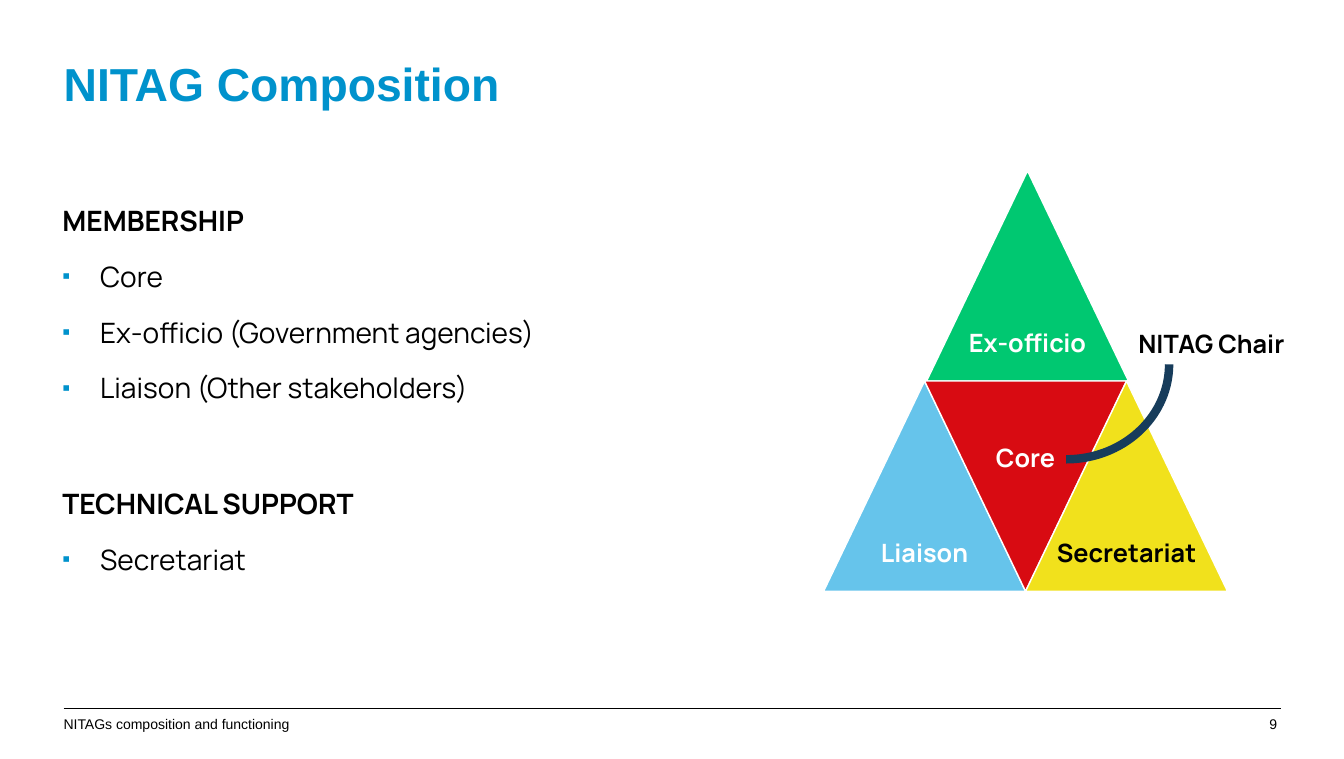
"""Build the NITAG Composition slide."""
from lxml import etree
from pptx import Presentation
from pptx.dml.color import RGBColor
from pptx.enum.shapes import MSO_CONNECTOR, MSO_SHAPE
from pptx.enum.text import MSO_ANCHOR, PP_ALIGN
from pptx.oxml.ns import qn
from pptx.util import Cm, Pt

LEFT, CENTER, RIGHT = PP_ALIGN.LEFT, PP_ALIGN.CENTER, PP_ALIGN.RIGHT
TOP, MIDDLE = MSO_ANCHOR.TOP, MSO_ANCHOR.MIDDLE
STRAIGHT, ARC = MSO_CONNECTOR.STRAIGHT, MSO_SHAPE.ARC
BLACK, WHITE, BLUE, NAVY = "000000", "FFFFFF", "0092CC", "173C5B"


def rgb(color):
    """Turn a hex string into a colour."""
    return RGBColor.from_string(color)


def write(sp, text, size=18, color=BLACK, bold=False, font="Manrope", align=LEFT,
          anchor=TOP, margins=(0.25, 0.13, 0.25, 0.13)):
    """Add a formatted paragraph to a shape and return it."""
    tf = sp.text_frame
    tf.word_wrap = True
    tf.vertical_anchor = anchor
    tf.margin_left, tf.margin_top, tf.margin_right, tf.margin_bottom = map(Cm, margins)
    p = tf.add_paragraph() if tf.text else tf.paragraphs[0]
    p.alignment = align
    r = p.add_run()
    r.text = text
    r.font.name, r.font.size, r.font.bold = font, Pt(size), bold
    r.font.color.rgb = rgb(color)
    return p


prs = Presentation()
prs.slide_width, prs.slide_height = Cm(33.81), Cm(19.1)
s = prs.slides.add_slide(prs.slide_layouts[5])

title = s.shapes.title
title.left, title.top, title.width, title.height = Cm(1.6), Cm(1.52), Cm(30.53), Cm(1.3)
p = write(title, "NITAG Composition", size=33, color=BLUE, bold=True, font="Arial",
          anchor=MIDDLE, margins=(0, 0.03, 0, 0))
p.line_spacing = 0.9

rule = s.shapes.add_connector(STRAIGHT, Cm(1.6), Cm(17.83), Cm(32.23), Cm(17.83))
rule.line.color.rgb = rgb(BLACK)
rule.line.width = Pt(0.75)
etree.SubElement(rule._element.spPr, qn("a:effectLst"))

for text, left, width, align in [
    ("NITAGs composition and functioning", 1.6, 21, LEFT),
    ("9", 29.64, 2.49, RIGHT),
]:
    footer = s.shapes.add_textbox(Cm(left), Cm(18.01), Cm(width), Cm(0.3))
    write(footer, text, size=10, font="Arial", align=align, margins=(0, 0, 0, 0))

body = s.shapes.add_textbox(Cm(1.32), Cm(5), Cm(16.84), Cm(11.81))
for text, is_heading, space_before in [
    ("MEMBERSHIP", True, 0),
    ("Core", False, 8.6),
    ("Ex-officio (Government agencies)", False, 8.6),
    ("Liaison (Other stakeholders)", False, 8.6),
    ("TECHNICAL SUPPORT", True, 51.7),
    ("Secretariat", False, 8.6),
]:
    p = write(body, text, size=20, bold=is_heading)
    p.space_before, p.space_after = Pt(space_before), Pt(7.1)
    if not is_heading:
        pPr = p._p.get_or_add_pPr()
        pPr.set("marL", str(Cm(0.95)))
        pPr.set("indent", str(-Cm(0.95)))
        bullet_color = etree.SubElement(pPr, qn("a:buClr"))
        etree.SubElement(bullet_color, qn("a:srgbClr"), val=BLUE)
        etree.SubElement(pPr, qn("a:buSzPct"), val="80000")
        etree.SubElement(pPr, qn("a:buFont"), typeface="Arial")
        etree.SubElement(pPr, qn("a:buChar"), char="▪")

SIDE, HEIGHT, LABEL = 5.08, 5.29, 1.2
for text, left, top, points_up, label_mid, fill, color in [
    ("Ex-officio", 23.31, 4.3, True, 4.37, "00C871", WHITE),
    ("Liaison", 20.72, 9.59, True, 4.37, "66C4EB", WHITE),
    ("Core", 23.26, 9.59, False, 1.96, "D80B12", WHITE),
    ("Secretariat", 25.8, 9.59, True, 4.37, "F1E11C", BLACK),
]:
    base, tip = (top + HEIGHT, top) if points_up else (top, top + HEIGHT)
    outline = s.shapes.build_freeform(Cm(left), Cm(base))
    outline.add_line_segments([(Cm(left + SIDE / 2), Cm(tip)), (Cm(left + SIDE), Cm(base))])
    sp = outline.convert_to_shape()
    sp.shadow.inherit = False
    sp.fill.solid()
    sp.fill.fore_color.rgb = rgb(fill)
    sp.line.color.rgb = rgb(WHITE)
    sp.line.width = Pt(1)
    label_top = label_mid - LABEL / 2
    p = write(sp, text, color=color, bold=True, align=CENTER, anchor=MIDDLE,
              margins=(0.25, label_top, 0.25, HEIGHT - label_top - LABEL))
    p.line_spacing = 0.9

chair = s.shapes.add_textbox(Cm(28.19), Cm(8.13), Cm(4.57), Cm(1.02))
write(chair, "NITAG Chair", bold=True, align=CENTER)

arc = s.shapes.add_shape(ARC, Cm(24.43), Cm(6.58), Cm(4.78), Cm(5.18))
arc.rotation = 90
arc.shadow.inherit = False
arc.fill.background()
arc.line.color.rgb = rgb(NAVY)
arc.line.width = Pt(6)

prs.save("out.pptx")
